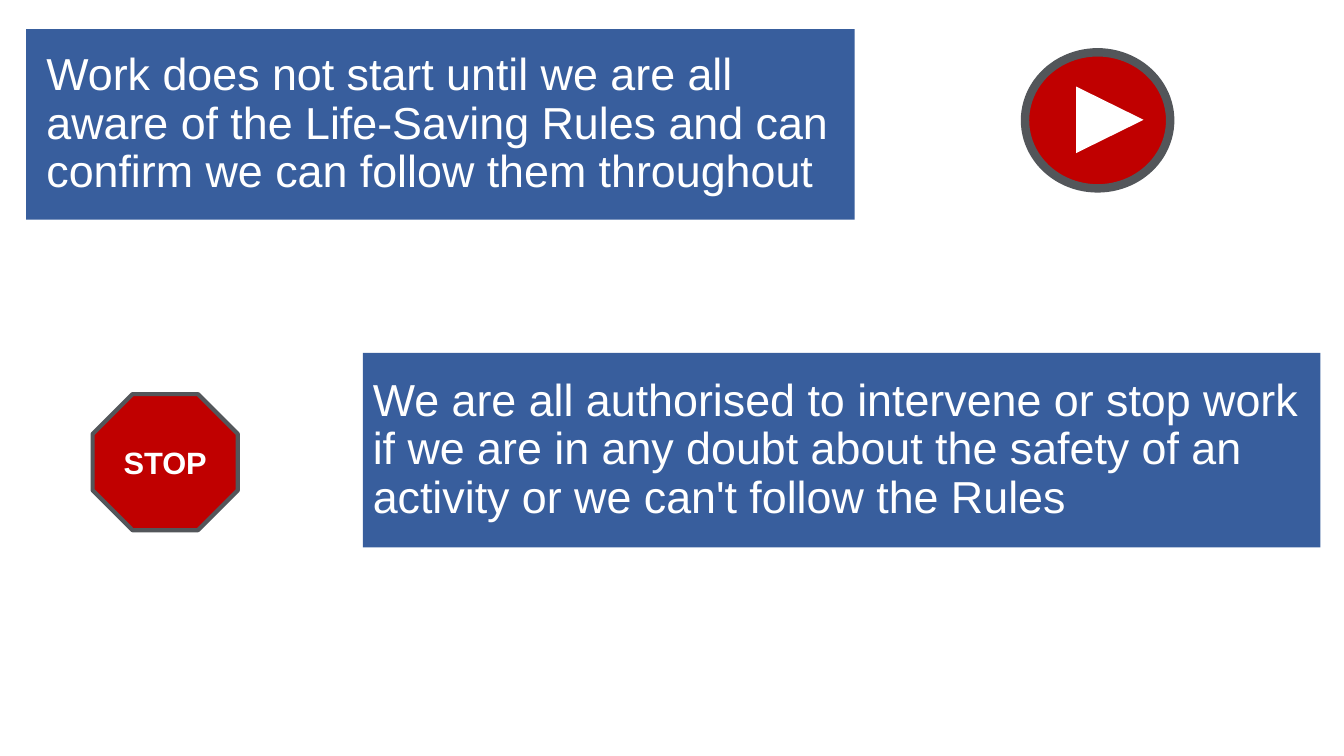
from pptx import Presentation
from pptx.dml.color import RGBColor
from pptx.enum.shapes import MSO_SHAPE as SHAPE
from pptx.enum.text import MSO_ANCHOR as ANCHOR, PP_ALIGN as ALIGN
from pptx.util import Pt

BLUE = RGBColor(0x38, 0x5E, 0x9D)
RED = RGBColor(0xC0, 0x00, 0x00)
GREY = RGBColor(0x53, 0x56, 0x5A)
WHITE = RGBColor(0xFF, 0xFF, 0xFF)

SIGN_W, SIGN_H = 103.7, 97.2

prs = Presentation()
prs.slide_width, prs.slide_height = Pt(960), Pt(540)
s = prs.slides.add_slide(prs.slide_layouts[6])


def add_filled(kind, x, y, w, h, fill, border=0):
    """Add a flat shape; a border of 0 points means no outline."""
    sp = s.shapes.add_shape(kind, Pt(x), Pt(y), Pt(w), Pt(h))
    sp.shadow.inherit = False
    sp.fill.solid()
    sp.fill.fore_color.rgb = fill
    if border:
        sp.line.color.rgb = GREY
        sp.line.width = Pt(border)
    else:
        sp.line.fill.background()
    return sp


def write(sp, text, size, align, bold=False):
    tf = sp.text_frame
    tf.word_wrap = True
    tf.vertical_anchor = ANCHOR.MIDDLE
    p = tf.paragraphs[0]
    p.text = text
    p.alignment = align
    p.font.name = "Arial"
    p.font.size = Pt(size)
    p.font.bold = bold
    p.font.color.rgb = WHITE
    return p


# Rule banners: left, top, width, height, left margin, text
banners = [
    (18.7, 20.9, 591.8, 136.1, 14.4,
     "Work does not start until we are all aware of the Life-Saving Rules "
     "and can confirm we can follow them throughout"),
    (259.2, 252, 684, 139, 7.2,
     "We are all authorised to intervene or stop work if we are in any doubt "
     "about the safety of an activity or we can't follow the Rules"),
]
for x, y, w, h, margin, text in banners:
    banner = add_filled(SHAPE.RECTANGLE, x, y, w, h, BLUE)
    banner.text_frame.margin_left = Pt(margin)
    p = write(banner, text, 32, ALIGN.LEFT)
    p.line_spacing = 0.9

# Start sign
add_filled(SHAPE.OVAL, 732.2, 37.4, SIGN_W, SIGN_H, RED, 6)
play = add_filled(SHAPE.ISOSCELES_TRIANGLE, 769, 61.5, 47.5, 48.2, WHITE)
play.rotation = 90

# Stop sign
stop = add_filled(SHAPE.OCTAGON, 66.2, 281.5, SIGN_W, SIGN_H, RED, 3)
write(stop, "STOP", 22, ALIGN.CENTER, bold=True)

prs.save("out.pptx")
